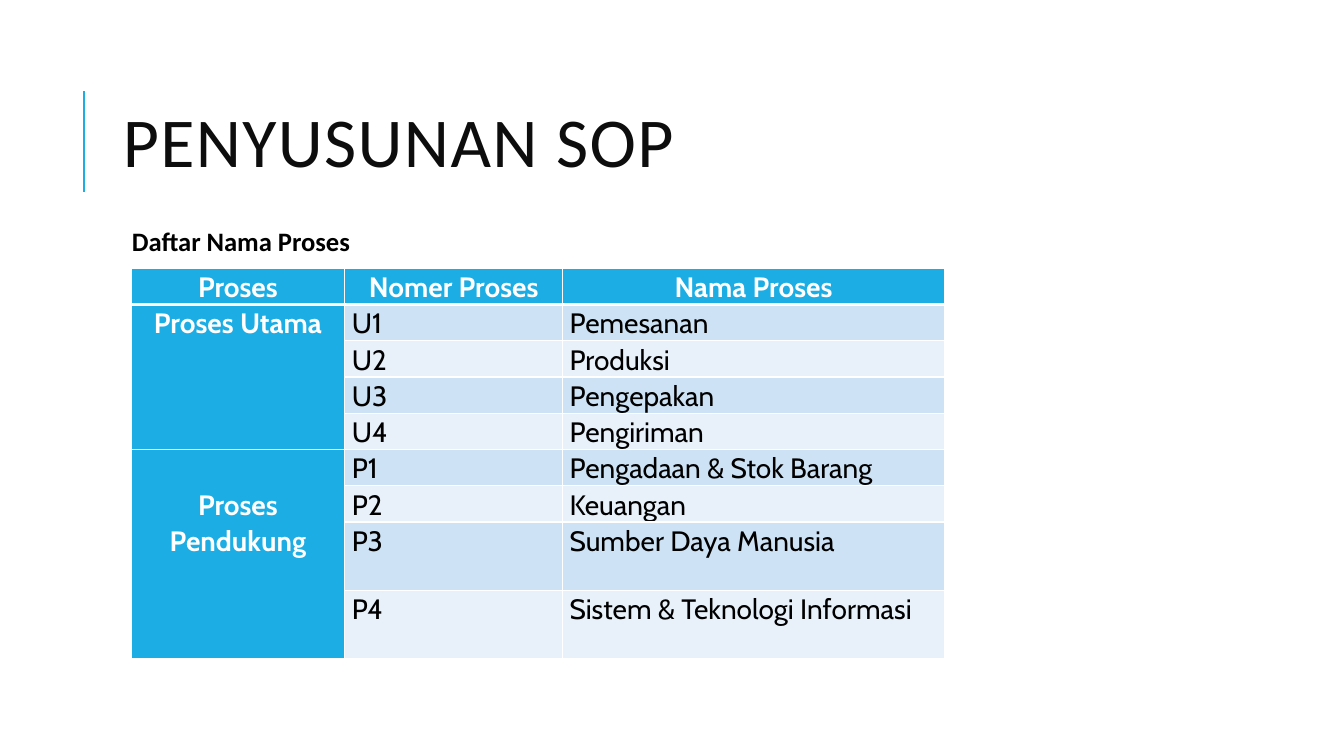
from lxml import etree
from pptx import Presentation
from pptx.dml.color import RGBColor
from pptx.enum.shapes import MSO_CONNECTOR
from pptx.enum.text import MSO_ANCHOR, PP_ALIGN
from pptx.oxml.ns import qn
from pptx.util import Inches, Pt

CENTER, LEFT = PP_ALIGN.CENTER, PP_ALIGN.LEFT
MIDDLE = MSO_ANCHOR.MIDDLE
STRAIGHT = MSO_CONNECTOR.STRAIGHT

TITLE = "PENYUSUNAN SOP"
CAPTION = "Daftar Nama Proses"
HEADERS = ["Proses", "Nomer Proses", "Nama Proses"]
# group name, top margin of its cell in inches, processes
GROUPS = [
    ("Proses Utama", 0, [
        ("U1", "Pemesanan"),
        ("U2", "Produksi"),
        ("U3", "Pengepakan"),
        ("U4", "Pengiriman"),
    ]),
    ("Proses Pendukung", 0.36, [
        ("P1", "Pengadaan & Stok Barang"),
        ("P2", "Keuangan"),
        ("P3", "Sumber Daya Manusia"),
        ("P4", "Sistem & Teknologi Informasi"),
    ]),
]
COLUMN_WIDTHS = [2.12, 2.16, 3.79]
ROW_HEIGHTS = [0.36] * 7 + [0.68] * 2

THEME = {
    "accent": "1CADE4", "bands": ["CDE3F5", "E8F1FA"],
    "title": "0D0D0D", "text": "000000", "white": "FFFFFF",
    "heading_font": "Calibri", "table_font": "Cabin",
    "title_size": 50, "caption_size": 19, "table_size": 20,
}


def write_text(frame, text, *, font, size, color, bold=False,
               align=LEFT, line_spacing=1.0, letter_spacing=0):
    paragraph = frame.paragraphs[0]
    paragraph.alignment = align
    paragraph.line_spacing = line_spacing
    run = paragraph.add_run()
    run.text = text
    run.font.name = font
    run.font.size = Pt(size)
    run.font.bold = bold
    run.font.color.rgb = RGBColor.from_string(color)
    if letter_spacing:
        run.font._element.set("spc", str(letter_spacing * 100))


def add_text_box(slide, box, text, **text_format):
    shape = slide.shapes.add_textbox(*map(Inches, box))
    shape.text_frame.word_wrap = True
    shape.text_frame.vertical_anchor = MIDDLE
    write_text(shape.text_frame, text, **text_format)


def add_title_rule(slide):
    x = Inches(0.83)
    rule = slide.shapes.add_connector(STRAIGHT, x, Inches(1.9), x, Inches(0.9))
    rule.line.color.rgb = RGBColor.from_string(THEME["accent"])
    rule.line.width = Pt(1.5)
    etree.SubElement(rule._element.spPr, qn("a:effectLst"))


def style_cell(cell, fill, bottom=1, top=1):
    """Set the fill, margins and white borders, with widths in points."""
    cell.margin_left = cell.margin_right = Inches(0.07)
    cell.margin_top = cell.margin_bottom = 0
    properties = cell._tc.get_or_add_tcPr()
    for side, width in (("L", 1), ("R", 1), ("T", top), ("B", bottom)):
        border = etree.SubElement(properties, qn(f"a:ln{side}"), w=str(Pt(width)))
        solid = etree.SubElement(border, qn("a:solidFill"))
        etree.SubElement(solid, qn("a:srgbClr"), val=THEME["white"])
    cell.fill.solid()
    cell.fill.fore_color.rgb = RGBColor.from_string(fill)


def write_cell(cell, text, heading=False):
    write_text(cell.text_frame, text, font=THEME["table_font"],
               size=THEME["table_size"], bold=heading,
               color=THEME["white"] if heading else THEME["text"],
               align=CENTER if heading else LEFT, line_spacing=1.07)


def add_process_table(slide):
    table = slide.shapes.add_table(
        len(ROW_HEIGHTS), len(COLUMN_WIDTHS), Inches(1.3), Inches(2.66),
        Inches(sum(COLUMN_WIDTHS)), Inches(sum(ROW_HEIGHTS))).table
    for column, width in zip(table.columns, COLUMN_WIDTHS):
        column.width = Inches(width)
    for row, height in zip(table.rows, ROW_HEIGHTS):
        row.height = Inches(height)

    for column, header in enumerate(HEADERS):
        style_cell(table.cell(0, column), THEME["accent"], bottom=3)
        write_cell(table.cell(0, column), header, heading=True)

    row = 1
    for group, top_margin, processes in GROUPS:
        first = row
        for process in processes:
            top = 3 if row == 1 else 1
            style_cell(table.cell(row, 0), THEME["accent"], top=top)
            for column, text in enumerate(process, start=1):
                cell = table.cell(row, column)
                style_cell(cell, THEME["bands"][(row - 1) % 2], top=top)
                write_cell(cell, text)
            row += 1
        group_cell = table.cell(first, 0)
        group_cell.merge(table.cell(row - 1, 0))
        group_cell.margin_top = Inches(top_margin)
        write_cell(group_cell, group, heading=True)


def main():
    presentation = Presentation()
    presentation.slide_width = Inches(13.33)
    presentation.slide_height = Inches(7.5)
    slide = presentation.slides.add_slide(presentation.slide_layouts[6])
    add_title_rule(slide)
    add_text_box(slide, (1.12, 0.64, 10.63, 1.64), TITLE,
                 font=THEME["heading_font"], size=THEME["title_size"],
                 color=THEME["title"], line_spacing=0.8, letter_spacing=1)
    add_process_table(slide)
    add_text_box(slide, (1.21, 2.19, 8, 0.4), CAPTION,
                 font=THEME["heading_font"], size=THEME["caption_size"],
                 color=THEME["text"], bold=True)
    presentation.save("out.pptx")


if __name__ == "__main__":
    main()
